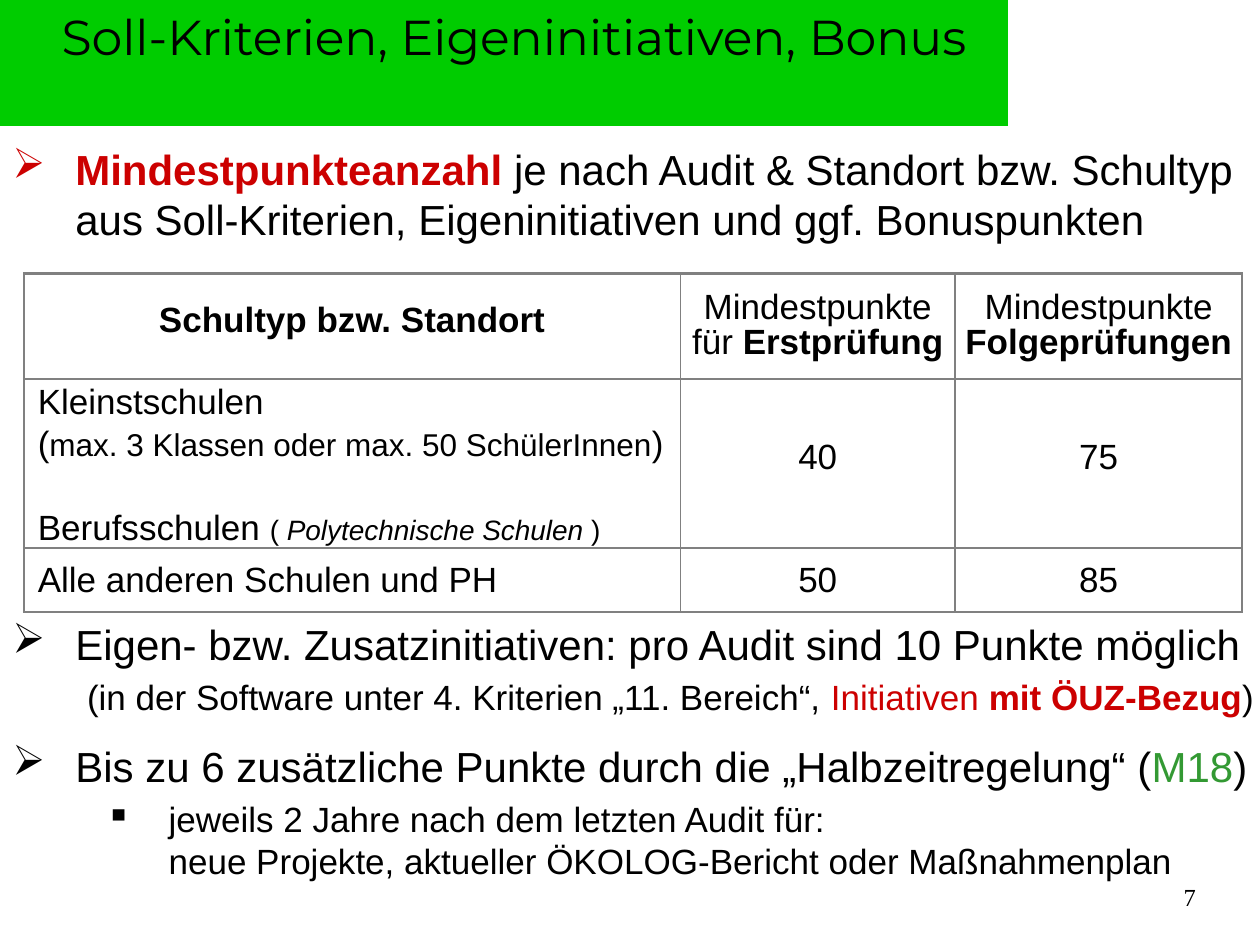
from dataclasses import dataclass

from lxml import etree
from pptx import Presentation
from pptx import util as u
from pptx.dml.color import RGBColor
from pptx.enum import text as t
from pptx.oxml.ns import qn

INK = {"black": "000000", "red": "CC0000", "green": "339933",
       "banner": "00CC00", "grid": "808080"}
LEFT, MID, RIGHT = t.PP_ALIGN.LEFT, t.PP_ALIGN.CENTER, t.PP_ALIGN.RIGHT


@dataclass
class Run:
    text: str
    size: float | None = None
    ink: str | None = None
    bold: bool = False
    ital: bool = False


@dataclass
class Para:
    runs: list[Run]
    size: float = 20
    font: str = "Arial"
    align: t.PP_ALIGN = LEFT
    before: float = 0
    after: float = 0
    line: float | None = None
    mark: str = ""
    left: float = 0
    hang: float = 0
    level: int = 0


def rgb(name: str) -> RGBColor:
    return RGBColor.from_string(INK[name])


def put_para(par, item: Para) -> None:
    props = par._p.get_or_add_pPr()
    props.set("marL", str(u.Inches(item.left)))
    props.set("indent", str(-u.Inches(item.hang)))
    if item.mark:
        etree.SubElement(props, qn("a:buChar")).set("char", item.mark)
    par.level, par.alignment = item.level, item.align
    par.space_before, par.space_after = u.Pt(item.before), u.Pt(item.after)
    if item.line:
        par.line_spacing = u.Pt(item.line)
    par.font.name, par.font.size = item.font, u.Pt(item.size)
    par.font.color.rgb = rgb("black")
    for part in item.runs:
        for num, line in enumerate(part.text.split("\n")):
            if num:
                par.add_line_break()
            if not line:
                continue
            run = par.add_run()
            run.text = line
            if part.size:
                run.font.size = u.Pt(part.size)
            if part.ink:
                run.font.color.rgb = rgb(part.ink)
            if part.bold:
                run.font.bold = True
            if part.ital:
                run.font.italic = True


def fill_frame(frame, items: list[Para]) -> None:
    frame.word_wrap = True
    for num, item in enumerate(items):
        put_para(frame.add_paragraph() if num else frame.paragraphs[0], item)


def add_text(slide, x: float, y: float, w: float, h: float, items: list[Para]) -> None:
    box = slide.shapes.add_textbox(u.Inches(x), u.Inches(y), u.Inches(w), u.Inches(h))
    fill_frame(box.text_frame, items)


def bezier(a, b, c, d, steps: int = 30) -> list[tuple[float, float]]:
    pts = []
    for num in range(1, steps + 1):
        k = num / steps
        mix = ((1 - k) ** 3, 3 * k * (1 - k) ** 2, 3 * k * k * (1 - k), k ** 3)
        pts.append(tuple(sum(m * p[i] for m, p in zip(mix, (a, b, c, d))) for i in (0, 1)))
    return pts


def add_banner(slide) -> None:
    start = (0.02, 0)
    curves = [((1.46, 0), (7.64, 0), (8.97, 0)),
              ((8.92, 0.42), (8.16, 0.57), (6.92, 0.66)),
              ((5.5, 0.78), (1.21, 0.75), (0.02, 0.75)),
              ((0.02, 0.32), (0, 0.41), start)]
    pts, last = [], start
    for one, two, end in curves:
        pts += bezier(last, one, two, end)
        last = end
    form = slide.shapes.build_freeform(*start, scale=u.Inches(1))
    form.add_line_segments(pts, close=True)
    shape = form.convert_to_shape()
    shape.shadow.inherit = False
    shape.fill.solid()
    shape.fill.fore_color.rgb = rgb("banner")
    shape.line.fill.background()


def set_edges(cell, widths: dict[str, float]) -> None:
    props = cell._tc.get_or_add_tcPr()
    for num, (side, width) in enumerate(widths.items()):
        line = etree.Element(qn(f"a:ln{side}"), w=str(u.Pt(width)))
        fill = etree.SubElement(line, qn("a:solidFill"))
        etree.SubElement(fill, qn("a:srgbClr"), val=INK["grid"])
        props.insert(num, line)


def add_grid(slide, x: float, y: float, cols: list[float], rows: list[float],
             cells: list[list[list[Para]]]) -> None:
    table = slide.shapes.add_table(len(rows), len(cols), u.Inches(x), u.Inches(y),
                                   u.Inches(sum(cols)), u.Inches(sum(rows))).table
    table.first_row = table.horz_banding = False
    for col, width in zip(table.columns, cols):
        col.width = u.Inches(width)
    for row, height in zip(table.rows, rows):
        row.height = u.Inches(height)
    for r, line in enumerate(cells):
        for c, items in enumerate(line):
            cell = table.cell(r, c)
            cell.fill.background()
            cell.margin_left = cell.margin_right = u.Inches(0.07)
            cell.margin_top = cell.margin_bottom = 0
            cell.vertical_anchor = t.MSO_ANCHOR.MIDDLE
            fill_frame(cell.text_frame, items)
            outer = {"L": c == 0, "R": c == len(cols) - 1,
                     "T": r == 0, "B": r == len(rows) - 1}
            set_edges(cell, {side: 1.5 if out else 1 for side, out in outer.items()})


def centred(*runs: Run, line: float | None = None) -> list[Para]:
    return [Para(list(runs), align=MID, after=2, line=line)]


def arrow(*runs: Run, before: float = 0) -> Para:
    return Para(list(runs), size=24, before=before, mark="➢", left=0.5, hang=0.5)


def main() -> None:
    deck = Presentation()
    deck.slide_width, deck.slide_height = u.Inches(10), u.Inches(7.5)
    slide = deck.slides.add_slide(deck.slide_layouts[6])

    # Banner, title and page number
    add_banner(slide)
    add_text(slide, 0.39, 0, 9.03, 0.6,
             [Para([Run("Soll-Kriterien, Eigeninitiativen, Bonus")], 28, "Montserrat")])
    add_text(slide, 7.51, 6.95, 2.08, 0.32,
             [Para([Run("7")], 14, "Times New Roman", RIGHT)])

    # Lead point
    add_text(slide, 0, 1.09, 10.26, 0.9, [arrow(
        Run("Mindestpunkteanzahl", ink="red", bold=True),
        Run(" je nach Audit & Standort bzw. Schultyp\n"
            "aus Soll-Kriterien, Eigeninitiativen und ggf. Bonuspunkten"))])

    # Minimum points by school type
    small = [
        Para([Run("Kleinstschulen")], line=24, left=0.04),
        Para([Run("("), Run("max. 3 Klassen oder max. 50 SchülerInnen", 18), Run(")")],
             line=24, left=0.04),
        Para([Run("Berufsschulen "), Run("( ", 16),
              Run("Polytechnische Schulen ", 16, ital=True), Run(")", 16)],
             line=24, left=0.04, before=24)]
    add_grid(slide, 0.19, 2.17, [5.21, 2.18, 2.28], [0.84, 1.34, 0.51], [
        [centred(Run("Schultyp bzw. Standort", bold=True), line=15),
         centred(Run("Mindestpunkte für "), Run("Erstprüfung", bold=True), line=20),
         centred(Run("Mindestpunkte "), Run("Folgeprüfungen", bold=True), line=20)],
        [small, centred(Run("40"), line=15), centred(Run("75"), line=15)],
        [[Para([Run("Alle anderen Schulen und PH")], left=0.04, after=2)],
         centred(Run("50")), centred(Run("85"))]])

    # Further points
    add_text(slide, 0, 4.86, 10.26, 2.3, [
        arrow(Run("Eigen- bzw. Zusatzinitiativen: pro Audit sind 10 Punkte möglich\n "),
              Run("(in der Software unter 4. Kriterien „11. Bereich“, ", 20),
              Run("Initiativen ", 20, "red"),
              Run("mit ÖUZ-Bezug", 20, "red", True), Run(")", 20)),
        arrow(Run("Bis zu 6 zusätzliche Punkte durch die „Halbzeitregelung“ ("),
              Run("M18", ink="green"), Run(")"), before=12),
        Para([Run("jeweils 2 Jahre nach dem letzten Audit für:\n"
                  "neue Projekte, aktueller ÖKOLOG-Bericht oder Maßnahmenplan")],
             before=4, mark="▪", left=1.24, hang=0.5, level=1)])

    deck.save("out.pptx")


if __name__ == "__main__":
    main()
